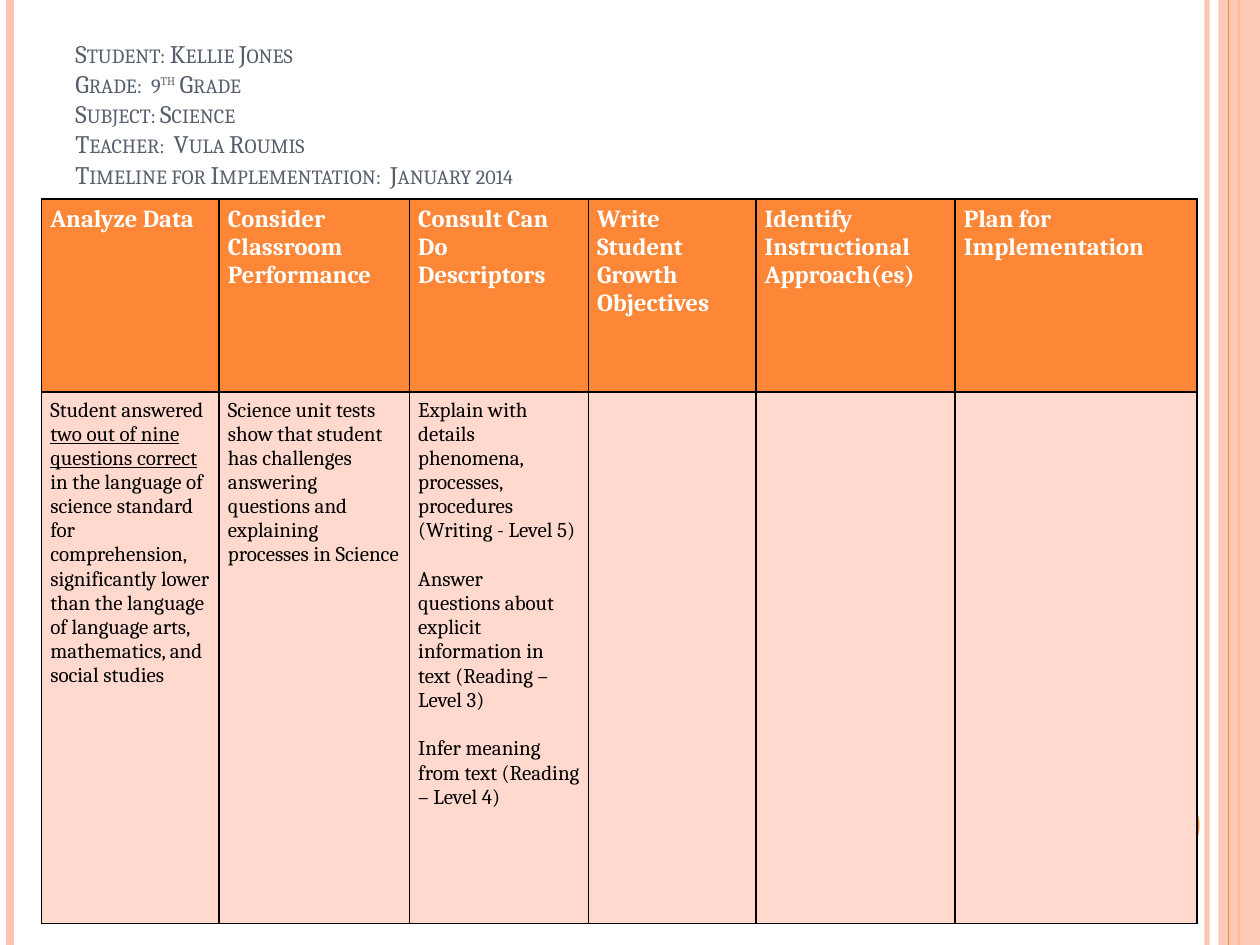
from lxml import etree
from pptx import Presentation
from pptx.dml.color import RGBColor
from pptx.enum import shapes, text
from pptx.oxml.ns import qn
from pptx.util import Inches, Pt

FONT = "Cambria"
ORANGE, PEACH, PALE = "FE8637", "FEC3AE", "FFD9CE"
BLACK, WHITE, SLATE = "000000", "FFFFFF", "575F6D"

# x, colour, points, opacity in percent
EDGES = [(9.58, PEACH, 3, 93), (0.08, PEACH, 4.5, 100), (9.83, ORANGE, 1.5, 100)]
INNER = (9.75, ORANGE, 0.75, 100)

# Each paragraph is a list of (words, style) runs
TITLE = [
    [("Student: Kellie Jones", "")],
    [("Grade:  9", ""), ("th", "super"), (" Grade", "")],
    [("Subject: Science", "")],
    [("Teacher:  Vula Roumis", "")],
    [("Timeline for Implementation:  January 2014", "")],
]
HEADS = ["Analyze Data", "Consider Classroom Performance",
         "Consult Can Do Descriptors", "Write Student Growth Objectives",
         "Identify Instructional Approach(es)", "Plan for Implementation"]
DATA = [[("Student answered ", ""),
         ("two out of nine questions correct ", "under"),
         ("in the language of science standard for comprehension, "
          "significantly lower than the language of language arts, "
          "mathematics, and social studies", "")]]
CLASS = [[("Science unit tests show that student has challenges answering "
           "questions and explaining processes in Science", "")]]
CAN_DO = [
    [("Explain with details phenomena, processes, procedures "
      "(Writing - Level 5)", "")],
    [("Answer", "")],
    [("questions about explicit information in text (Reading – Level 3)", "")],
    [("Infer meaning from text (Reading – Level 4)", "")],
]
GAPS = {1, 3}  # can-do paragraphs that open a new group
BODY = [DATA, CLASS, CAN_DO, [], [], []]
COLS = [1.41, 1.51, 1.42, 1.33, 1.58, 1.92]
ROWS = [1.53, 4.22]


def rgb(code):
    return RGBColor.from_string(code)


def fade(shape, percent):
    """Set the opacity of the shape's colour."""
    if percent < 100:
        clr = next(shape._element.spPr.iter(qn("a:srgbClr")))
        etree.SubElement(clr, qn("a:alpha"), val=str(percent * 1000))


def rule(slide, x, color, width, percent):
    """Draw a full-height vertical line."""
    line = slide.shapes.add_connector(
        shapes.MSO_CONNECTOR.STRAIGHT, Inches(x), 0, Inches(x), Inches(7.5))
    line.line.color.rgb = rgb(color)
    line.line.width = Pt(width)
    fade(line, percent)
    etree.SubElement(line._element.spPr, qn("a:effectLst"))


def block(slide, kind, box, color, percent=100):
    shape = slide.shapes.add_shape(kind, *map(Inches, box))
    shape.shadow.inherit = False
    shape.fill.solid()
    shape.fill.fore_color.rgb = rgb(color)
    shape.line.fill.background()
    fade(shape, percent)


def write(frame, paras, size, color, bold=False, caps=False):
    for i, runs in enumerate(paras):
        para = frame.paragraphs[0] if i == 0 else frame.add_paragraph()
        for words, style in runs:
            run = para.add_run()
            run.text = words
            font = run.font
            font.name, font.size, font.bold = FONT, Pt(size), bold
            font.color.rgb = rgb(color)
            if style == "under":
                font.underline = True
            if style == "super":
                font._element.set("baseline", "30000")
            if caps:
                font._element.set("cap", "small")


def border(cell):
    props = cell._tc.get_or_add_tcPr()
    for i, side in enumerate("LRTB"):
        line = etree.Element(qn("a:ln" + side), w=str(Pt(1)))
        fill = etree.SubElement(line, qn("a:solidFill"))
        etree.SubElement(fill, qn("a:srgbClr"), val=BLACK)
        props.insert(i, line)


def plan(slide):
    """Add the planning table."""
    table = slide.shapes.add_table(
        2, len(COLS), Inches(0.33), Inches(1.58),
        Inches(sum(COLS)), Inches(sum(ROWS))).table
    for col, width in zip(table.columns, COLS):
        col.width = Inches(width)
    for row, height in zip(table.rows, ROWS):
        row.height = Inches(height)
    heads = [[[(head, "")]] for head in HEADS]
    looks = [(heads, ORANGE, 14, WHITE, True), (BODY, PALE, 12, BLACK, False)]
    for r, (cells, fill, size, color, bold) in enumerate(looks):
        for c, paras in enumerate(cells):
            cell = table.cell(r, c)
            cell.margin_left = cell.margin_right = Inches(0.07)
            cell.fill.solid()
            cell.fill.fore_color.rgb = rgb(fill)
            border(cell)
            write(cell.text_frame, paras, size, color, bold)
    for i in GAPS:
        table.cell(1, 2).text_frame.paragraphs[i].space_before = Pt(14)


def main():
    deck = Presentation()
    deck.slide_width, deck.slide_height = Inches(10), Inches(7.5)
    slide = deck.slides.add_slide(deck.slide_layouts[6])
    for edge in EDGES:
        rule(slide, *edge)
    block(slide, shapes.MSO_SHAPE.RECTANGLE, (9.67, 0, 0.33, 7.5), PEACH, 87)
    rule(slide, *INNER)
    block(slide, shapes.MSO_SHAPE.OVAL, (8.92, 6.25, 0.6, 0.6), ORANGE)
    title = slide.shapes.add_textbox(*map(Inches, (0.5, 0.3, 8.17, 1.25)))
    frame = title.text_frame
    frame.word_wrap = True
    frame.vertical_anchor = text.MSO_ANCHOR.BOTTOM
    write(frame, TITLE, 14.4, SLATE, caps=True)
    plan(slide)
    deck.save("out.pptx")


if __name__ == "__main__":
    main()
